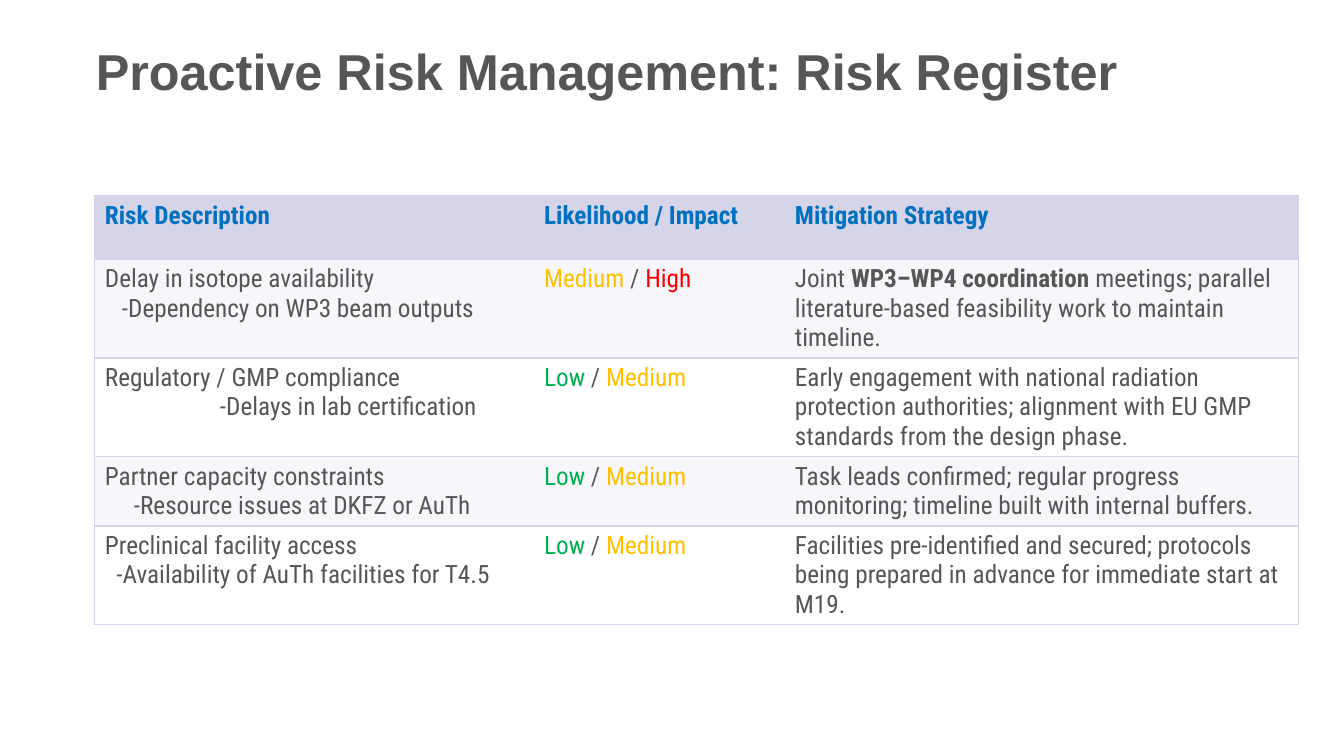
from lxml.etree import SubElement
from pptx import Presentation
from pptx.dml.color import RGBColor
from pptx.enum.text import MSO_ANCHOR, MSO_AUTO_SIZE, PP_ALIGN
from pptx.oxml.ns import qn
from pptx.util import Cm, Pt

GREY, BLUE, LILAC = "565656", "0070C0", "D6D4E8"
LEVEL_COLOURS = {"Low": "00B050", "Medium": "FFC000", "High": "FF0000"}
HEADINGS = ["Risk Description", "Likelihood / Impact", "Mitigation Strategy"]
COLUMN_WIDTHS = [11.07, 6.32, 12.95]
ROW_HEIGHT = 1.6
RISKS = [
    ("Delay in isotope availability", "-Dependency on WP3 beam outputs", 0.43, "Medium", "High",
     [("Joint ", False), ("WP3–WP4 coordination ", True),
      ("meetings; parallel literature-based feasibility work to maintain timeline.", False)]),
    ("Regulatory / GMP compliance", "-Delays in lab certification", 2.9, "Low", "Medium",
     [("Early engagement with national radiation protection authorities; "
       "alignment with EU GMP standards from the design phase.", False)]),
    ("Partner capacity constraints", "-Resource issues at DKFZ or AuTh", 0.73, "Low", "Medium",
     [("Task leads confirmed; regular progress monitoring; "
       "timeline built with internal buffers.", False)]),
    ("Preclinical facility access", "-Availability of AuTh facilities for T4.5", 0.29, "Low", "Medium",
     [("Facilities pre-identified and secured; protocols being prepared "
       "in advance for immediate start at M19.", False)]),
]


def colour(value):
    """Turn a hex string into a colour."""
    return RGBColor.from_string(value)


class RiskPage:
    """Hold the style and the current slide, and add its elements."""

    title_font, body_font = "Arial", "Roboto Condensed"

    def __init__(self, deck):
        """Add a title-only page to the deck."""
        self.page = deck.slides.add_slide(deck.slide_layouts[5])

    def style(self, span, font, size, tint, bold=False):
        """Format one run."""
        span.font.name = font
        span.font.size = Pt(size)
        span.font.bold = bold
        span.font.color.rgb = colour(tint)

    def title(self, text, left, top, width, height):
        """Place and format the title."""
        box = self.page.shapes.title
        box.left, box.top, box.width, box.height = Cm(left), Cm(top), Cm(width), Cm(height)
        frame = box.text_frame
        frame.text = text
        frame.word_wrap = True
        frame.auto_size = MSO_AUTO_SIZE.NONE
        frame.vertical_anchor = MSO_ANCHOR.MIDDLE
        para = frame.paragraphs[0]
        para.alignment = PP_ALIGN.LEFT
        para.line_spacing = 0.9
        self.style(para.runs[0], self.title_font, 36, GREY, True)

    def table(self, left, top, widths, row_height, row_count):
        """Add an unstyled table with the given columns."""
        frame = self.page.shapes.add_table(row_count, len(widths), Cm(left), Cm(top),
                                           Cm(sum(widths)), Cm(row_height * row_count))
        table = frame.table
        table.first_row = table.horz_banding = False
        for column, width in zip(table.columns, widths):
            column.width = Cm(width)
        return table

    def cell(self, cell, fill, first, last, lines):
        """Fill, border and write a cell from lines of (text, colour, bold) spans."""
        properties = cell._tc.get_or_add_tcPr()
        for side, shown in (("L", first), ("R", last), ("T", True), ("B", True)):
            line = SubElement(properties, qn(f"a:ln{side}"), w=str(Pt(1)))
            if shown:
                solid = SubElement(line, qn("a:solidFill"))
                SubElement(solid, qn("a:srgbClr"), val=LILAC)
            else:
                SubElement(line, qn("a:noFill"))
        cell.fill.solid()
        cell.fill.fore_color.rgb = colour(fill)
        frame = cell.text_frame
        for number, spans in enumerate(lines):
            para = frame.add_paragraph() if number else frame.paragraphs[0]
            for text, tint, bold in spans:
                span = para.add_run()
                span.text = text
                self.style(span, self.body_font, 18, tint, bold)

    def row(self, table, number, fill, contents):
        """Write one row of cells."""
        final = len(contents) - 1
        for column, lines in enumerate(contents):
            self.cell(table.cell(number, column), fill, column == 0, column == final, lines)

    def indent(self, para, distance):
        """Indent a whole paragraph."""
        para._p.get_or_add_pPr().set("marL", str(Cm(distance)))


def main():
    """Build and save the risk register."""
    deck = Presentation()
    deck.slide_width, deck.slide_height = Cm(33.87), Cm(19.05)
    register = RiskPage(deck)
    register.title("Proactive Risk Management: Risk Register", 2.16, 0.91, 30.35, 1.9)
    table = register.table(2.39, 4.93, COLUMN_WIDTHS, ROW_HEIGHT, len(RISKS) + 1)
    register.row(table, 0, LILAC, [[[(heading, BLUE, True)]] for heading in HEADINGS])
    for number, (risk, cause, indent, likelihood, impact, strategy) in enumerate(RISKS, 1):
        levels = [(likelihood, LEVEL_COLOURS[likelihood], False), (" / ", GREY, False),
                  (impact, LEVEL_COLOURS[impact], False)]
        register.row(table, number, "F7F7FB" if number % 2 else "FFFFFF", [
            [[(risk, GREY, False)], [(cause, GREY, False)]],
            [levels],
            [[(text, GREY, bold) for text, bold in strategy]],
        ])
        register.indent(table.cell(number, 0).text_frame.paragraphs[1], indent)
    deck.save("out.pptx")


if __name__ == "__main__":
    main()
